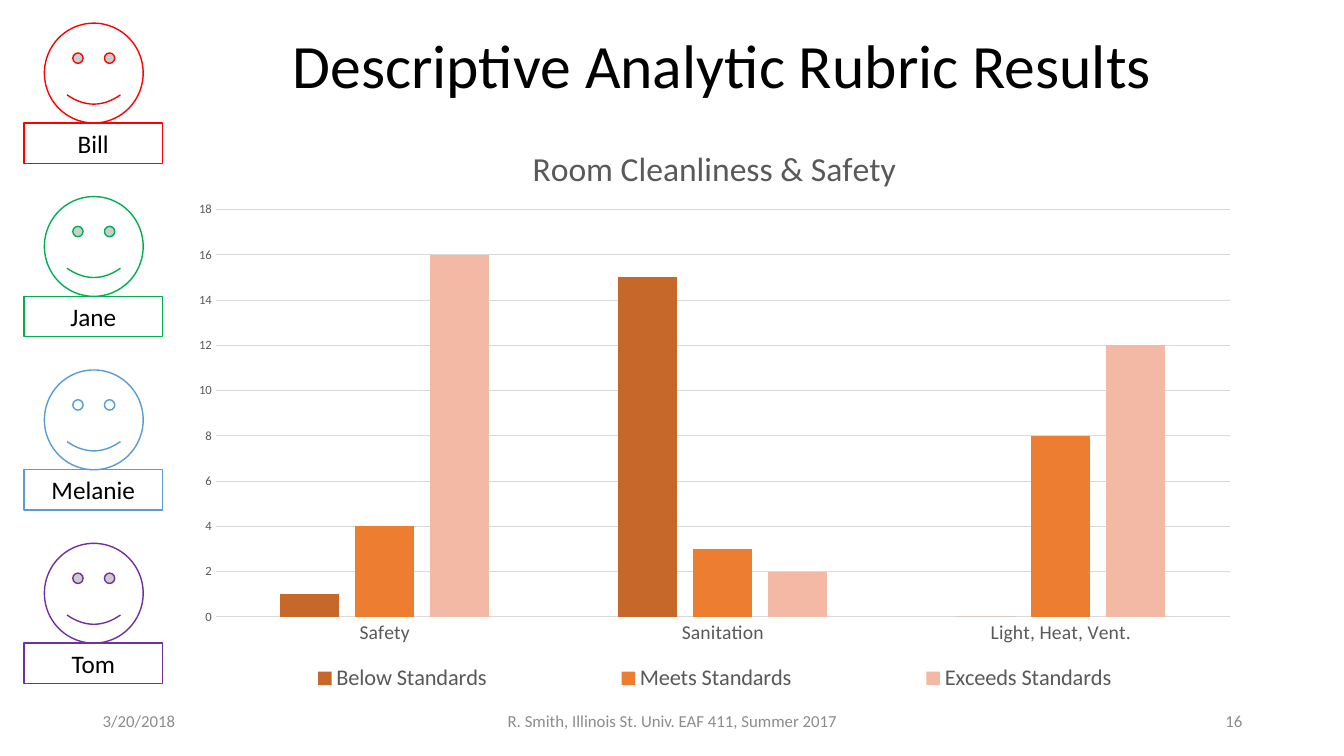
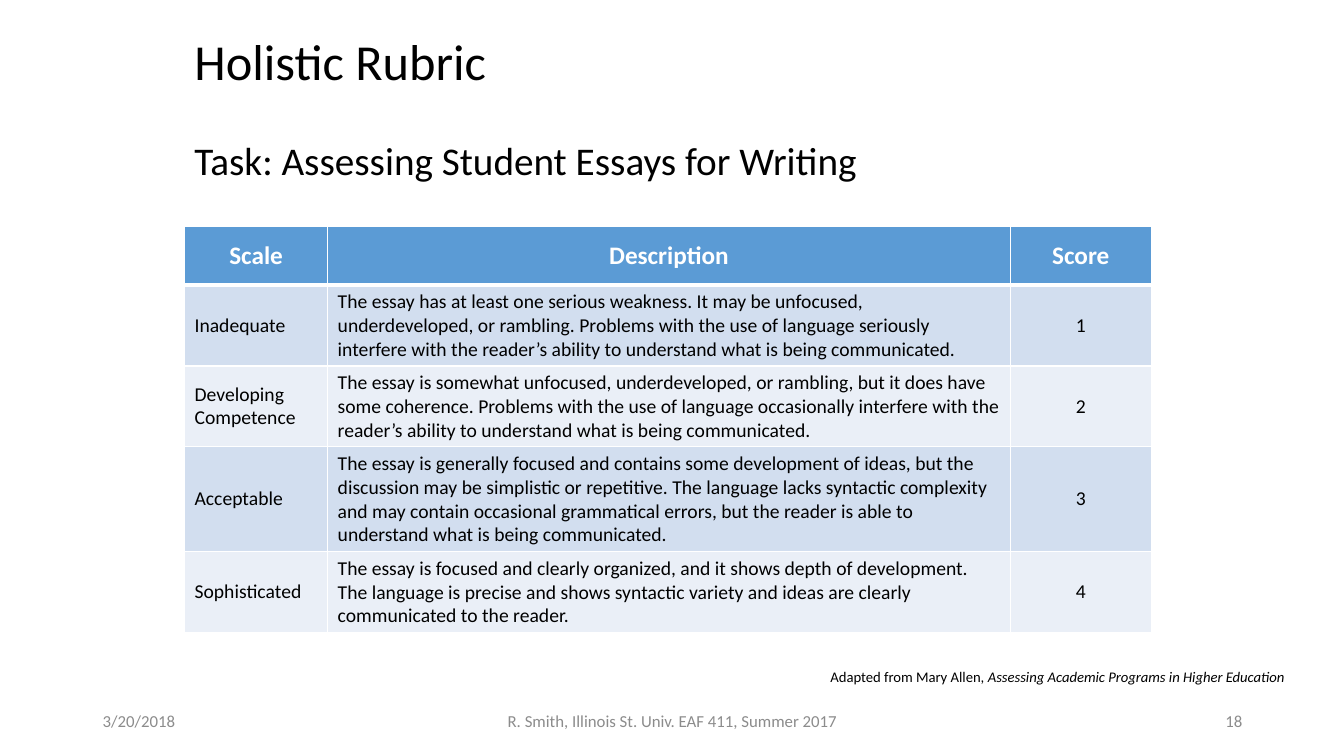
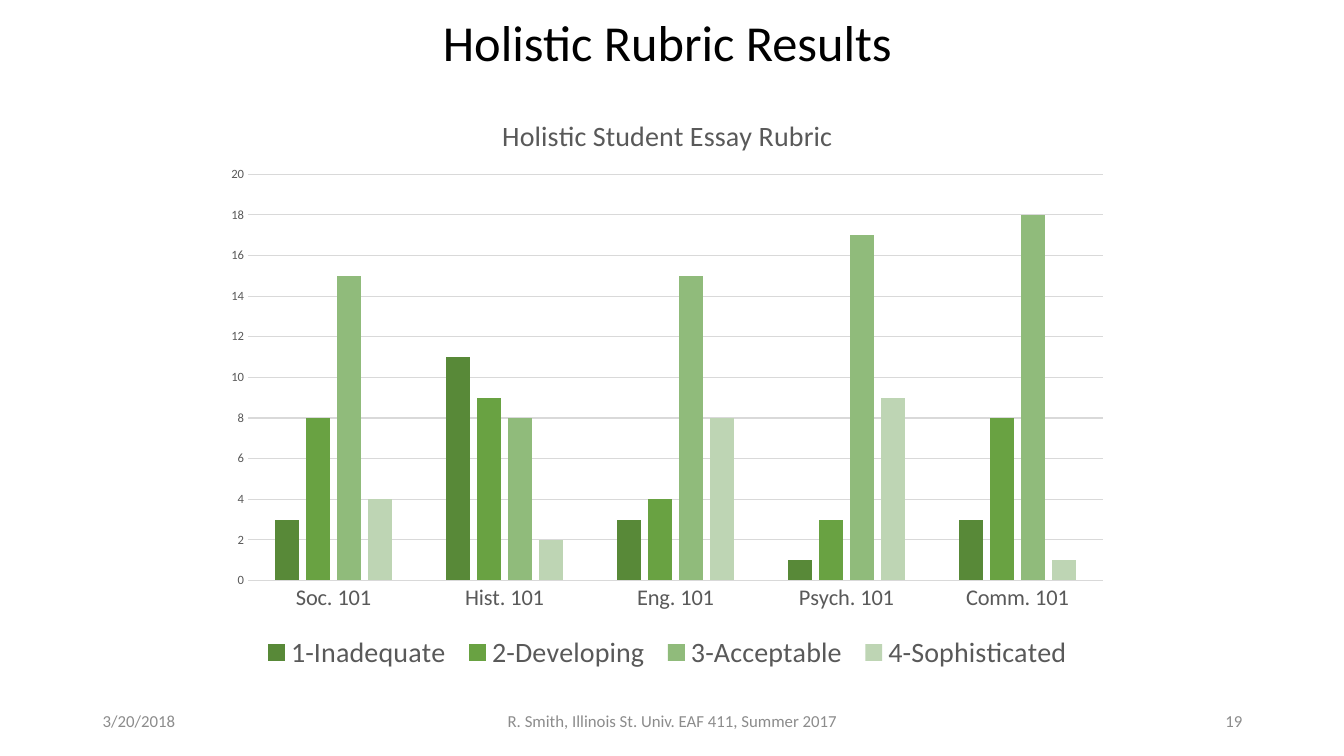
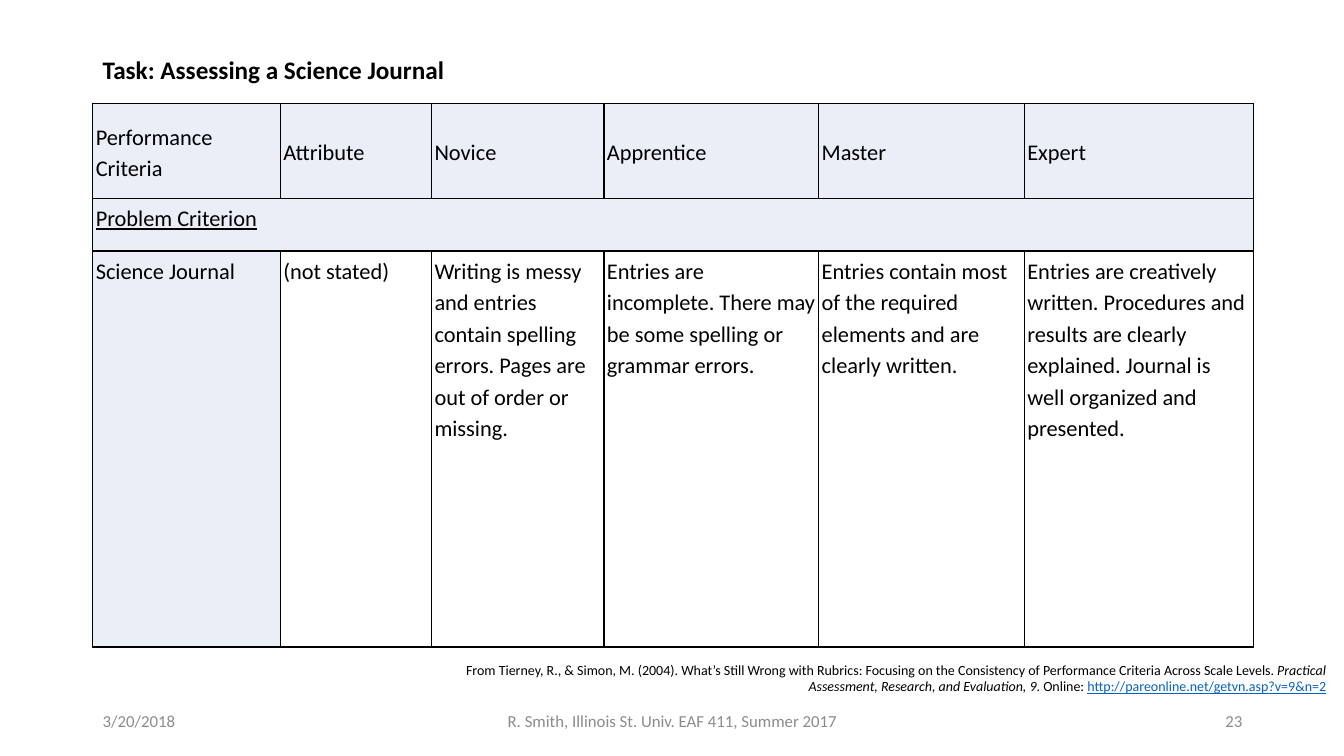
import dataclasses

import pptx
import pptx.chart.data
import pptx.dml.color
import pptx.enum.chart
import pptx.enum.shapes
import pptx.enum.text
import pptx.oxml
import pptx.oxml.ns
import pptx.util

Inches = pptx.util.Inches
Pt = pptx.util.Pt
ALIGN = pptx.enum.text.PP_ALIGN
ANCHOR = pptx.enum.text.MSO_ANCHOR
SHAPE = pptx.enum.shapes.MSO_SHAPE


@dataclasses.dataclass(frozen=True)
class Theme:
    font: str = "Calibri"
    # Colours
    ink: str = "000000"
    paper: str = "FFFFFF"
    footer: str = "8C8C8C"
    chart_text: str = "595959"
    grid: str = "D9D9D9"
    link: str = "0563C1"
    header: str = "5B9BD5"
    band_dark: str = "D2DEEF"
    band_light: str = "EAEFF7"
    red: str = "FF0000"
    green: str = "00B050"
    purple: str = "7030A0"
    oranges: tuple = ("C56829", "ED7D31", "F3B9A4")
    greens: tuple = ("588938", "69A242", "90BB7B", "BED5B4")
    # Type sizes in points
    title_large: float = 44
    title: float = 36
    subtitle: float = 28
    label: float = 18
    criteria: float = 16
    body: float = 14
    small: float = 12
    credit: float = 10.5
    citation: float = 10
    tick: float = 9


THEME = Theme()


def rgb(colour):
    return pptx.dml.color.RGBColor.from_string(colour)


def style_font(font, size, colour=THEME.ink, bold=False, italic=False, underline=False):
    font.name, font.size = THEME.font, Pt(size)
    font.bold, font.italic, font.underline = bold, italic, underline
    font.color.rgb = rgb(colour)


def write(frame, text, align=ALIGN.LEFT, spacing=None, after=None, **font_format):
    """Fill a text frame with a string, or with (string, format changes) pairs."""
    paragraph = frame.paragraphs[0]
    paragraph.alignment = align
    if spacing:
        paragraph.line_spacing = spacing
    if after:
        paragraph.space_after = Pt(after)
    for words, changes in [(text, {})] if isinstance(text, str) else text:
        run = paragraph.add_run()
        run.text = words
        style_font(run.font, **{**font_format, **changes})


def border(cell, colour, bottom=1):
    """Draw the four cell borders, one point wide except perhaps the bottom."""
    properties = cell._tc.get_or_add_tcPr()
    for index, (side, width) in enumerate(zip("LRTB", (1, 1, 1, bottom))):
        properties.insert(index, pptx.oxml.parse_xml(
            f'<a:ln{side} {pptx.oxml.ns.nsdecls("a")} w="{int(Pt(width))}">'
            f'<a:solidFill><a:srgbClr val="{colour}"/></a:solidFill></a:ln{side}>'))


def place_in_chart(element, index, box, chart_box, target=""):
    """Fix a chart part to a slide rectangle given in inches."""
    for old in element.findall(pptx.oxml.ns.qn("c:layout")):
        element.remove(old)
    left, top, width, height = chart_box
    shares = {"x": (box[0] - left) / width, "y": (box[1] - top) / height,
              "w": box[2] / width, "h": box[3] / height}
    modes = '<c:xMode val="edge"/><c:yMode val="edge"/>'
    values = "".join(f'<c:{key} val="{share:.4f}"/>' for key, share in shares.items())
    element.insert(index, pptx.oxml.parse_xml(
        f'<c:layout {pptx.oxml.ns.nsdecls("c")}><c:manualLayout>'
        f'{target}{modes}{values}</c:manualLayout></c:layout>'))


class Deck:
    def __init__(self):
        self.presentation = pptx.Presentation()
        self.presentation.slide_width = Inches(13.33)
        self.presentation.slide_height = Inches(7.5)
        self.slide = None

    def new_slide(self, number):
        self.slide = self.presentation.slides.add_slide(self.presentation.slide_layouts[6])
        for left, width, text, align in (
                (0.92, 3, "3/20/2018", ALIGN.LEFT),
                (4.42, 4.5, "R. Smith, Illinois St. Univ. EAF 411, Summer 2017", ALIGN.CENTER),
                (9.42, 3, str(number), ALIGN.RIGHT)):
            self.text((left, 6.95, width, 0.4), text, anchor=ANCHOR.MIDDLE, align=align,
                      size=THEME.small, colour=THEME.footer)

    def text(self, box, text, anchor=ANCHOR.TOP, **text_format):
        frame = self.slide.shapes.add_textbox(*map(Inches, box)).text_frame
        frame.word_wrap = True
        frame.vertical_anchor = anchor
        write(frame, text, **text_format)

    def title(self, box, text, size=THEME.title, align=ALIGN.CENTER):
        self.text(box, text, size=size, align=align, spacing=0.9)

    def person(self, top, name, colour, filled=True):
        """A smiling face standing on a name plate."""
        shapes = self.slide.shapes.add_group_shape().shapes
        face = shapes.add_shape(SHAPE.SMILEY_FACE, *map(Inches, (0.44, top, 0.98, 0.99)))
        plate = shapes.add_shape(SHAPE.RECTANGLE, *map(Inches, (0.24, top + 0.99, 1.37, 0.4)))
        for part in (face, plate):
            part.shadow.inherit = False
            part.line.color.rgb = rgb(colour)
            part.line.width = Pt(1)
            if filled:
                part.fill.solid()
                part.fill.fore_color.rgb = rgb(THEME.paper)
            else:
                part.fill.background()
        write(plate.text_frame, name, align=ALIGN.CENTER, size=THEME.label)

    def table(self, box, widths, heights):
        table = self.slide.shapes.add_table(len(heights), len(widths), *map(Inches, box)).table
        table.first_row = table.horz_banding = False
        for column, width in zip(table.columns, widths):
            column.width = Inches(width)
        for row, height in zip(table.rows, heights):
            row.height = Inches(height)
        return table

    def cell(self, cell, text, fill, line, bottom=1, anchor=ANCHOR.MIDDLE, inset=None,
             **text_format):
        cell.fill.solid()
        cell.fill.fore_color.rgb = rgb(fill)
        cell.vertical_anchor = anchor
        if inset:
            cell.margin_left = cell.margin_right = Inches(inset)
            cell.margin_top = cell.margin_bottom = Inches(inset)
        border(cell, line, bottom)
        if text:
            write(cell.text_frame, text, **text_format)

    def column_chart(self, box, title, categories, series, colours, top_value,
                     plot_box, legend_box, title_size, category_size, legend_size):
        data = pptx.chart.data.CategoryChartData()
        data.categories = categories
        for name, values in series.items():
            data.add_series(name, values)
        chart = self.slide.shapes.add_chart(
            pptx.enum.chart.XL_CHART_TYPE.COLUMN_CLUSTERED, *map(Inches, box), data).chart
        style_font(chart.font, THEME.citation)
        chart.has_title = True
        write(chart.chart_title.text_frame, title, align=ALIGN.CENTER,
              size=title_size, colour=THEME.chart_text)

        # Columns
        plot = chart.plots[0]
        plot.gap_width, plot.overlap, plot.vary_by_categories = 219, -27, False
        for columns, colour in zip(plot.series, colours):
            columns.format.fill.solid()
            columns.format.fill.fore_color.rgb = rgb(colour)

        # Axes
        scale = chart.value_axis
        scale.minimum_scale, scale.maximum_scale, scale.major_unit = 0, top_value, 2
        for axis, size in ((chart.category_axis, category_size), (scale, THEME.tick)):
            axis.major_tick_mark = pptx.enum.chart.XL_TICK_MARK.NONE
            axis.minor_tick_mark = pptx.enum.chart.XL_TICK_MARK.NONE
            style_font(axis.tick_labels.font, size, THEME.chart_text)
        scale.format.line.fill.background()
        scale.has_major_gridlines = True
        for lines in (chart.category_axis, scale.major_gridlines):
            lines.format.line.color.rgb = rgb(THEME.grid)
            lines.format.line.width = Pt(0.75)

        # Legend and fixed places
        chart.has_legend = True
        chart.legend.position = pptx.enum.chart.XL_LEGEND_POSITION.BOTTOM
        chart.legend.include_in_layout = False
        style_font(chart.legend.font, legend_size, THEME.chart_text)
        place_in_chart(chart.legend._element, 1, legend_box, box)
        plot_area = chart._chartSpace.chart.plotArea
        place_in_chart(plot_area, 0, plot_box, box, '<c:layoutTarget val="inner"/>')


def analytic_results(deck):
    deck.new_slide(16)
    deck.title((1.76, 0.3, 10.81, 1.25), "Descriptive Analytic Rubric Results",
               size=THEME.title_large)
    deck.column_chart(
        (1.76, 1.22, 10.65, 5.73), "Room Cleanliness & Safety",
        ["Safety", "Sanitation", "Light, Heat, Vent."],
        {"Below Standards": (1, 15, 0), "Meets Standards": (4, 3, 8),
         "Exceeds Standards": (16, 2, 12)},
        THEME.oranges, 18, plot_box=(2.14, 2.08, 10.06, 4.04),
        legend_box=(1.89, 6.53, 10.4, 0.4), title_size=24, category_size=14, legend_size=16)
    people = (("Bill", THEME.red), ("Jane", THEME.green),
              ("Melanie", THEME.header), ("Tom", THEME.purple))
    for index, (name, colour) in enumerate(people):
        deck.person(0.23 + 1.72 * index, name, colour, filled=name != "Melanie")


def holistic_rubric(deck):
    deck.new_slide(18)
    deck.title((1.83, 0.32, 10, 1), "Holistic Rubric", align=ALIGN.LEFT)
    deck.title((1.83, 1.36, 9.5, 0.8), "Task: Assessing Student Essays for Writing",
               size=THEME.subtitle, align=ALIGN.LEFT)
    levels = (
        ("Inadequate", "The essay has at least one serious weakness. It may be unfocused, "
         "underdeveloped, or rambling. Problems with the use of language seriously interfere "
         "with the reader’s ability to understand what is being communicated."),
        ("Developing Competence", "The essay is somewhat unfocused, underdeveloped, or "
         "rambling, but it does have some coherence. Problems with the use of language "
         "occasionally interfere with the reader’s ability to understand what is being "
         "communicated."),
        ("Acceptable", "The essay is generally focused and contains some development of "
         "ideas, but the discussion may be simplistic or repetitive. The language lacks "
         "syntactic complexity and may contain occasional grammatical errors, but the reader "
         "is able to understand what is being communicated."),
        ("Sophisticated", "The essay is focused and clearly organized, and it shows depth of "
         "development. The language is precise and shows syntactic variety and ideas are "
         "clearly communicated to the reader."))
    rubric = deck.table((1.83, 2.25, 9.59, 4.02), (1.42, 6.77, 1.4),
                        (0.58, 0.8, 0.8, 1.04, 0.8))
    for column, heading in enumerate(("Scale", "Description", "Score")):
        deck.cell(rubric.cell(0, column), heading, THEME.header, THEME.paper, bottom=3,
                  align=ALIGN.CENTER, size=THEME.label, colour=THEME.paper, bold=True)
    for score, level in enumerate(levels, 1):
        fill = THEME.band_dark if score % 2 else THEME.band_light
        for column, text in enumerate((*level, str(score))):
            deck.cell(rubric.cell(score, column), text, fill, THEME.paper, size=THEME.body,
                      align=ALIGN.CENTER if column == 2 else ALIGN.LEFT)
    deck.text((3.92, 6.58, 8.92, 0.28),
              [("Adapted from Mary Allen, ", {}),
               ("Assessing Academic Programs in Higher Education", {"italic": True})],
              align=ALIGN.RIGHT, size=THEME.credit)


def holistic_results(deck):
    deck.new_slide(19)
    deck.column_chart(
        (2.12, 0.93, 9, 5.78), "Holistic Student Essay Rubric",
        ["Soc. 101", "Hist. 101", "Eng. 101", "Psych. 101", "Comm. 101"],
        {"1-Inadequate": (3, 11, 3, 1, 3), "2-Developing": (8, 9, 4, 3, 8),
         "3-Acceptable": (15, 8, 15, 17, 18), "4-Sophisticated": (4, 2, 8, 9, 1)},
        THEME.greens, 20, plot_box=(2.46, 1.73, 8.48, 4.03),
        legend_box=(2.52, 6.24, 8.2, 0.5), title_size=20, category_size=16, legend_size=20)
    deck.title((1.62, 0.13, 10, 1), "Holistic Rubric Results")


def science_journal(deck):
    deck.new_slide(23)
    rows = (
        ("Performance Criteria", "Attribute", "Novice", "Apprentice", "Master", "Expert"),
        ("Problem Criterion", "", "", "", "", ""),
        ("Science Journal", "(not stated)",
         "Writing is messy and entries contain spelling errors. Pages are out of order or "
         "missing.",
         "Entries are incomplete. There may be some spelling or grammar errors.",
         "Entries contain most of the required elements and are clearly written.",
         "Entries are creatively written. Procedures and results are clearly explained. "
         "Journal is well organized and presented."))
    journal = deck.table((0.92, 1.03, 11.51, 5.39), (1.86, 1.5, 1.71, 2.13, 2.04, 2.27),
                         (0.94, 0.52, 3.93))
    journal.cell(1, 0).merge(journal.cell(1, 5))
    for row, texts in enumerate(rows):
        for column, text in enumerate(texts):
            shaded = row < 2 or column == 0
            deck.cell(journal.cell(row, column), text,
                      THEME.band_light if shaded else THEME.paper, THEME.ink,
                      anchor=ANCHOR.TOP if row else ANCHOR.MIDDLE, inset=0.03,
                      spacing=1.15, after=10, size=THEME.criteria, underline=row == 1)
    deck.text((0.92, 0.49, 4.62, 0.4), "Task: Assessing a Science Journal",
              size=THEME.label, bold=True)
    deck.text((4.42, 6.51, 8.83, 0.44),
              [("From Tierney, R., & Simon, M. (2004). What’s Still Wrong with Rubrics: "
                "Focusing on the Consistency of Performance Criteria Across Scale Levels. ", {}),
               ("Practical Assessment, Research, and Evaluation, 9", {"italic": True}),
               (". Online: ", {}),
               ("http://pareonline.net/getvn.asp?v=9&n=2",
                {"colour": THEME.link, "underline": True})],
              align=ALIGN.RIGHT, size=THEME.citation)


def main():
    deck = Deck()
    for build in (analytic_results, holistic_rubric, holistic_results, science_journal):
        build(deck)
    deck.presentation.save("out.pptx")


if __name__ == "__main__":
    main()
